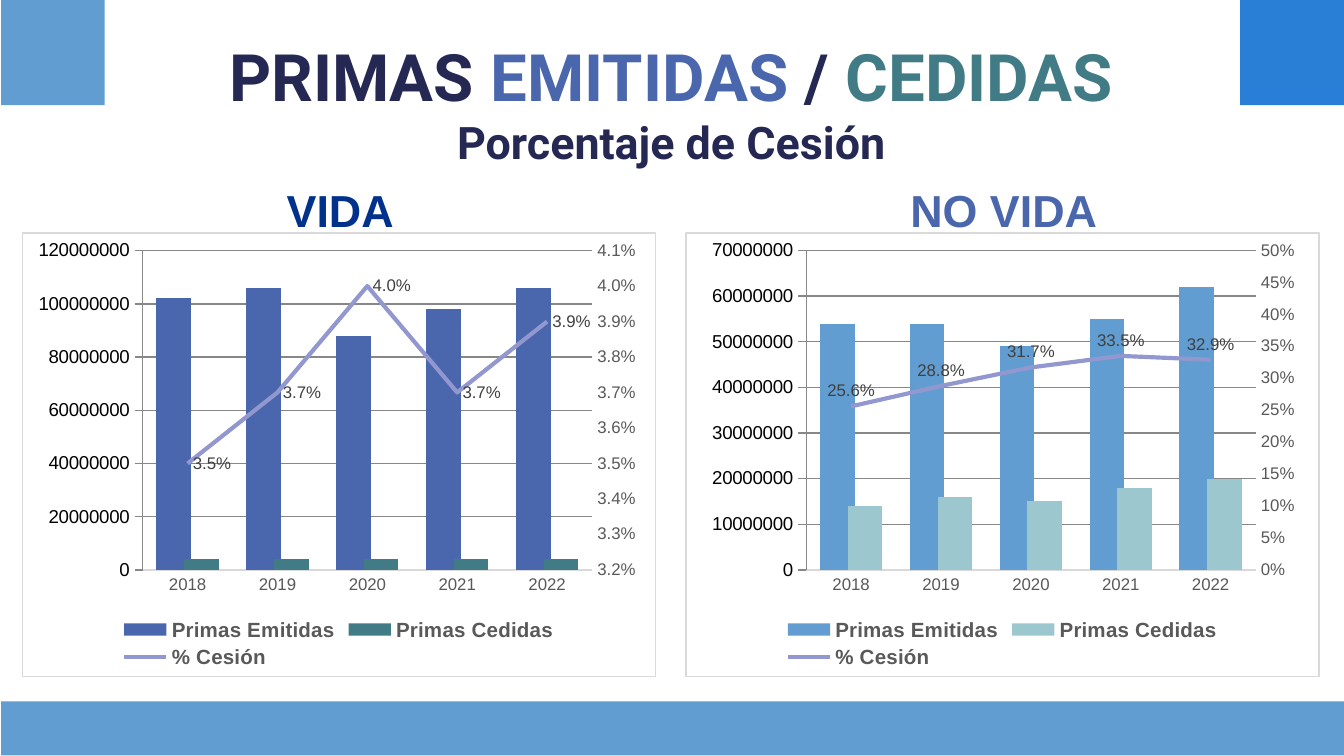
from pptx import Presentation
from pptx.chart.axis import ValueAxis
from pptx.chart.data import CategoryChartData
from pptx.dml.color import RGBColor
from pptx.enum.chart import XL_CHART_TYPE as CT, XL_LABEL_POSITION as LP
from pptx.enum.chart import XL_LEGEND_POSITION, XL_MARKER_STYLE, XL_TICK_MARK
from pptx.enum.shapes import MSO_SHAPE
from pptx.enum.text import MSO_ANCHOR, PP_ALIGN
from pptx.oxml import parse_xml
from pptx.oxml.ns import nsdecls, qn
from pptx.util import Cm, Pt

COLORS = {
    "navy": "242852", "blue": "4A66AC", "teal": "417B85", "royal": "00328C",
    "sky": "629DD1", "bright": "297FD5", "sky_bar": "619DD1", "aqua": "9CC7CE",
    "lilac": "9297CF", "grid": "D9D9D9", "axis": "595959", "label": "404040",
    "black": "000000",
}
YEARS = ["2018", "2019", "2020", "2021", "2022"]
MILLION = 1_000_000
AMOUNT_FORMAT = '_ * #,##0_ ;_ * \\-#,##0_ ;_ * "-"??_ ;_ '
PANELS = [
    dict(heading="VIDA", heading_color="royal", left=0.41, bars=("blue", "teal"),
         issued=[102, 106, 88, 98, 106], ceded=[4, 4, 4, 4, 4],
         rate=[0.035, 0.037, 0.04, 0.037, 0.039],
         rate_axis=(0.032, 0.041, 0.001, "0.0%"), label_position=LP.RIGHT),
    dict(heading="NO VIDA", heading_color="blue", left=12.95, bars=("sky_bar", "aqua"),
         issued=[54, 54, 49, 55, 62], ceded=[14, 16, 15, 18, 20],
         rate=[0.256, 0.288, 0.317, 0.335, 0.329],
         rate_axis=(0, 0.5, 0.05, "0%"), label_position=LP.ABOVE),
]


def rgb(name):
    return RGBColor.from_string(COLORS[name])


def set_font(font, size, color, bold=False, name="Arial"):
    font.name, font.size, font.bold = name, Pt(size), bold
    font.color.rgb = rgb(color)


def add_block(slide, left, top, width, height, color):
    sp = slide.shapes.add_shape(MSO_SHAPE.RECTANGLE, Cm(left), Cm(top), Cm(width), Cm(height))
    sp.shadow.inherit = False
    sp.fill.solid()
    sp.fill.fore_color.rgb = rgb(color)
    sp.line.fill.background()


def add_title(slide):
    sp = slide.shapes.title
    sp.left, sp.top, sp.width, sp.height = Cm(1.65), Cm(1.32), Cm(22.07), Cm(1.24)
    tf = sp.text_frame
    tf.word_wrap = True
    tf.vertical_anchor = MSO_ANCHOR.MIDDLE
    tf.margin_left = tf.margin_right = tf.margin_top = tf.margin_bottom = Cm(0.25)
    p = tf.paragraphs[0]
    p.alignment = PP_ALIGN.CENTER
    p.line_spacing = 1
    set_font(p.font, 35, "navy", True, "Roboto")
    for text, color in (("PRIMAS ", "navy"), ("EMITIDAS", "blue"), (" / ", "navy"), ("CEDIDAS", "teal")):
        r = p.add_run()
        r.text = text
        r.font.color.rgb = rgb(color)
    p.add_line_break()
    r = p.add_run()
    r.text = "Porcentaje de Cesión"
    r.font.size = Pt(24)


def add_heading(slide, text, color, left):
    tf = slide.shapes.add_textbox(Cm(left), Cm(3.33), Cm(12.04), Cm(1.27)).text_frame
    tf.word_wrap = True
    p = tf.paragraphs[0]
    p.text = text
    p.alignment = PP_ALIGN.CENTER
    set_font(p.font, 24, color, True)


def manual_layout(x, y, w, h, inner=False):
    target = '<c:layoutTarget val="inner"/>' if inner else ""
    return parse_xml(
        f'<c:layout {nsdecls("c")}><c:manualLayout>{target}'
        '<c:xMode val="edge"/><c:yMode val="edge"/>'
        f'<c:x val="{x}"/><c:y val="{y}"/><c:w val="{w}"/><c:h val="{h}"/>'
        '</c:manualLayout></c:layout>')


def remove_children(parent, tag):
    for child in parent.findall(qn(tag)):
        parent.remove(child)


def move_last_series_to_line(chart):
    """Turn the last column series into a line on a second axis; return that axis."""
    plot_area = chart.element.find(".//" + qn("c:plotArea"))
    bars = plot_area.find(qn("c:barChart"))
    ser = bars.findall(qn("c:ser"))[-1]
    remove_children(ser, "c:invertIfNegative")
    line = parse_xml(
        f'<c:lineChart {nsdecls("c")}><c:grouping val="standard"/><c:varyColors val="0"/>'
        '<c:marker val="1"/><c:axId val="5001"/><c:axId val="5002"/></c:lineChart>')
    line.insert(2, ser)
    bars.addnext(line)

    def axis(tag, number, other, deleted, side, crosses):
        return parse_xml(
            f'<c:{tag} {nsdecls("c")}><c:axId val="{number}"/>'
            '<c:scaling><c:orientation val="minMax"/></c:scaling>'
            f'<c:delete val="{deleted}"/><c:axPos val="{side}"/>'
            '<c:majorTickMark val="out"/><c:minorTickMark val="none"/>'
            f'<c:tickLblPos val="nextTo"/><c:crossAx val="{other}"/>'
            f'<c:crosses val="{crosses}"/></c:{tag}>')

    rate_axis = axis("valAx", 5002, 5001, 0, "r", "max")
    last_axis = plot_area.findall(qn("c:valAx"))[-1]
    last_axis.addnext(rate_axis)
    last_axis.addnext(axis("catAx", 5001, 5002, 1, "b", "autoZero"))
    return ValueAxis(rate_axis)


def style_value_axis(axis, low, high, step, number_format):
    axis.minimum_scale, axis.maximum_scale, axis.major_unit = low, high, step
    axis.tick_labels.number_format = number_format
    axis.tick_labels.number_format_is_linked = False
    set_font(axis.tick_labels.font, 9, "axis")
    axis.format.line.fill.background()


def style_line(line, color, width):
    line.color.rgb = rgb(color)
    line.width = Pt(width)


def style_frame(chart):
    """Set the chart's border, plot area and legend."""
    chart.element.find(qn("c:chart")).addnext(parse_xml(
        f'<c:spPr {nsdecls("c", "a")}><a:noFill/><a:ln w="9525"><a:solidFill>'
        f'<a:srgbClr val="{COLORS["grid"]}"/></a:solidFill></a:ln></c:spPr>'))
    plot_area = chart.element.find(".//" + qn("c:plotArea"))
    remove_children(plot_area, "c:layout")
    plot_area.insert(0, manual_layout(0.19, 0.04, 0.71, 0.72, inner=True))
    chart.has_legend = True
    legend = chart.legend
    legend.position = XL_LEGEND_POSITION.BOTTOM
    legend.include_in_layout = False
    set_font(legend.font, 11, "axis", True)
    element = chart.element.find(".//" + qn("c:legend"))
    remove_children(element, "c:layout")
    layout = manual_layout(0.15, 0.86, 0.7, 0.13)
    position = element.find(qn("c:legendPos"))
    if position is None:
        element.insert(0, layout)
    else:
        position.addnext(layout)


def add_premium_chart(slide, panel):
    data = CategoryChartData()
    data.categories = YEARS
    data.add_series("Primas Emitidas", [v * MILLION for v in panel["issued"]])
    data.add_series("Primas Cedidas", [v * MILLION for v in panel["ceded"]])
    data.add_series("% Cesión", panel["rate"], "0.0%")
    chart = slide.shapes.add_chart(CT.COLUMN_CLUSTERED, Cm(panel["left"]), Cm(4.39),
                                   Cm(11.99), Cm(8.41), data).chart
    chart.has_title = False
    set_font(chart.font, 10, "black")
    rate_axis = move_last_series_to_line(chart)
    style_frame(chart)

    columns, line = chart.plots
    columns.gap_width, columns.overlap = 80, 20
    columns.vary_by_categories = False
    for series, color in zip(columns.series, panel["bars"]):
        series.format.fill.solid()
        series.format.fill.fore_color.rgb = rgb(color)

    rate = line.series[0]
    rate.smooth = False
    rate.marker.style = XL_MARKER_STYLE.NONE
    style_line(rate.format.line, "lilac", 2.25)
    labels = rate.data_labels
    labels.show_value = True
    labels.number_format, labels.number_format_is_linked = "0.0%", False
    labels.position = panel["label_position"]
    set_font(labels.font, 9, "label")

    years, amounts = chart.category_axis, chart.value_axis
    years.major_tick_mark = amounts.major_tick_mark = XL_TICK_MARK.NONE
    set_font(years.tick_labels.font, 9, "axis")
    style_line(years.format.line, "grid", 0.75)
    style_value_axis(amounts, 0, 120 * MILLION, 20 * MILLION, AMOUNT_FORMAT)
    style_line(amounts.major_gridlines.format.line, "grid", 0.75)
    style_value_axis(rate_axis, *panel["rate_axis"])


def main():
    prs = Presentation()
    prs.slide_width, prs.slide_height = Cm(25.4), Cm(14.29)
    slide = prs.slides.add_slide(prs.slide_layouts[5])
    add_block(slide, 0.02, 13.26, 25.4, 1.02, "sky")
    add_block(slide, 0.02, -0.02, 1.96, 2.01, "sky")
    add_block(slide, 23.44, -0.02, 1.96, 2.01, "bright")
    add_title(slide)
    for panel in PANELS:
        add_heading(slide, panel["heading"], panel["heading_color"], panel["left"])
        add_premium_chart(slide, panel)
    prs.save("out.pptx")


if __name__ == "__main__":
    main()
